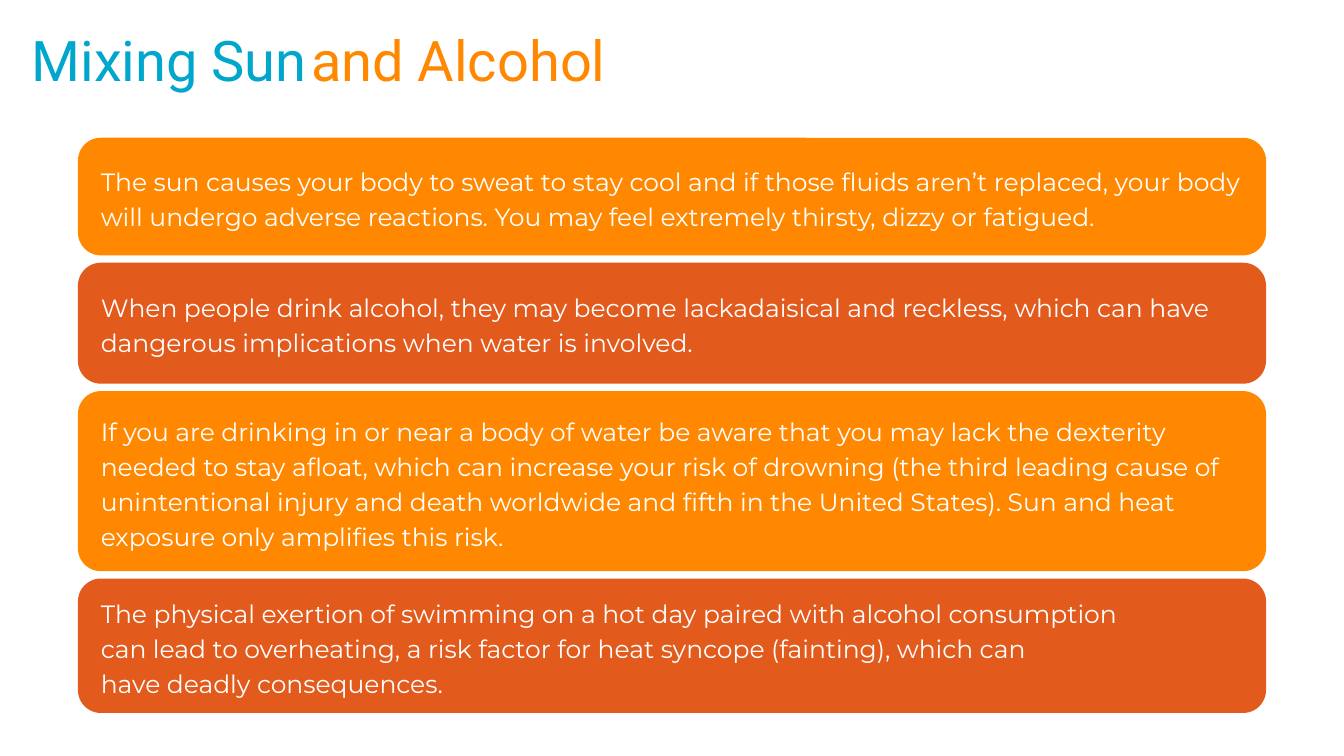
from pptx import Presentation
from pptx.dml.color import RGBColor
from pptx.enum import shapes, text
from pptx.util import Inches, Pt

HUES = {"blue": "01A6CC", "orange": "FF8800", "rust": "E35A1D", "white": "FFFFFF"}
GAP, RADIUS, INSET = 0.11, 0.34, 0.34

# fill, card height, text drop, text width, line count, words
CARDS = [
    ("orange", 1.75, 0.35, 16.99, 2,
     "The sun causes your body to sweat to stay cool and if those fluids aren’t "
     "replaced, your body will undergo adverse reactions. You may feel extremely "
     "thirsty, dizzy or fatigued."),
    ("rust", 1.8, 0.37, 17.29, 2,
     "When people drink alcohol, they may become lackadaisical and reckless, which "
     "can have dangerous implications when water is involved."),
    ("orange", 2.68, 0.3, 17.34, 4,
     "If you are drinking in or near a body of water be aware that you may lack the "
     "dexterity needed to stay afloat, which can increase your risk of drowning (the "
     "third leading cause of unintentional injury and death worldwide and fifth in "
     "the United States). Sun and heat exposure only amplifies this risk."),
    ("rust", 2.0, 0.22, 15.94, 3,
     "The physical exertion of swimming on a hot day paired with alcohol consumption\n"
     "can lead to overheating, a risk factor for heat syncope (fainting), which can\n"
     "have deadly consequences."),
]


def color(name):
    return RGBColor.from_string(HUES[name])


def write(frame, words, size, font, hue, line):
    """Fill a frame with one paragraph for each line of words."""
    frame.margin_left = frame.margin_right = 0
    frame.margin_top = frame.margin_bottom = 0
    frame.word_wrap = True
    frame.auto_size = text.MSO_AUTO_SIZE.NONE
    frame.vertical_anchor = text.MSO_ANCHOR.TOP
    for i, part in enumerate(words.split("\n")):
        para = frame.add_paragraph() if i else frame.paragraphs[0]
        para.alignment = text.PP_ALIGN.LEFT
        para.line_spacing = Pt(line)
        run = para.add_run()
        run.text = part
        run.font.size, run.font.name = Pt(size), font
        run.font.color.rgb = color(hue)


def add_title(slide, left, top, width, height):
    """Set the two-colour heading on one line."""
    style = dict(size=60, font="Roboto", line=66)
    head = slide.shapes.title
    head.left, head.top = Inches(left), Inches(top)
    head.width, head.height = Inches(width), Inches(height)
    write(head.text_frame, "Mixing Sun", hue="blue", **style)
    tail = slide.shapes.add_textbox(
        Inches(left + 4.16), Inches(top), Inches(width), Inches(height))
    write(tail.text_frame, "and Alcohol", hue="orange", **style)


def add_card(slide, left, top, width, card):
    fill, height, drop, span, lines, words = card
    box = slide.shapes.add_shape(
        shapes.MSO_SHAPE.ROUNDED_RECTANGLE,
        Inches(left), Inches(top), Inches(width), Inches(height))
    box.adjustments[0] = RADIUS / height
    box.shadow.inherit = False
    box.fill.solid()
    box.fill.fore_color.rgb = color(fill)
    box.line.fill.background()
    label = slide.shapes.add_textbox(
        Inches(left + INSET), Inches(top + drop), Inches(span), Inches(0.51 * lines))
    write(label.text_frame, words, size=26.8, font="Montserrat", hue="white", line=37.5)


def add_stack(slide, left, top, width):
    for card in CARDS:
        add_card(slide, left, top, width, card)
        top += card[1] + GAP


def main():
    deck = Presentation()
    deck.slide_width, deck.slide_height = Inches(20), Inches(11.25)
    slide = deck.slides.add_slide(deck.slide_layouts[5])
    add_title(slide, 0.47, 0.47, 7.57, 0.96)
    add_stack(slide, 1.16, 2.05, 17.68)
    deck.save("out.pptx")


if __name__ == "__main__":
    main()
